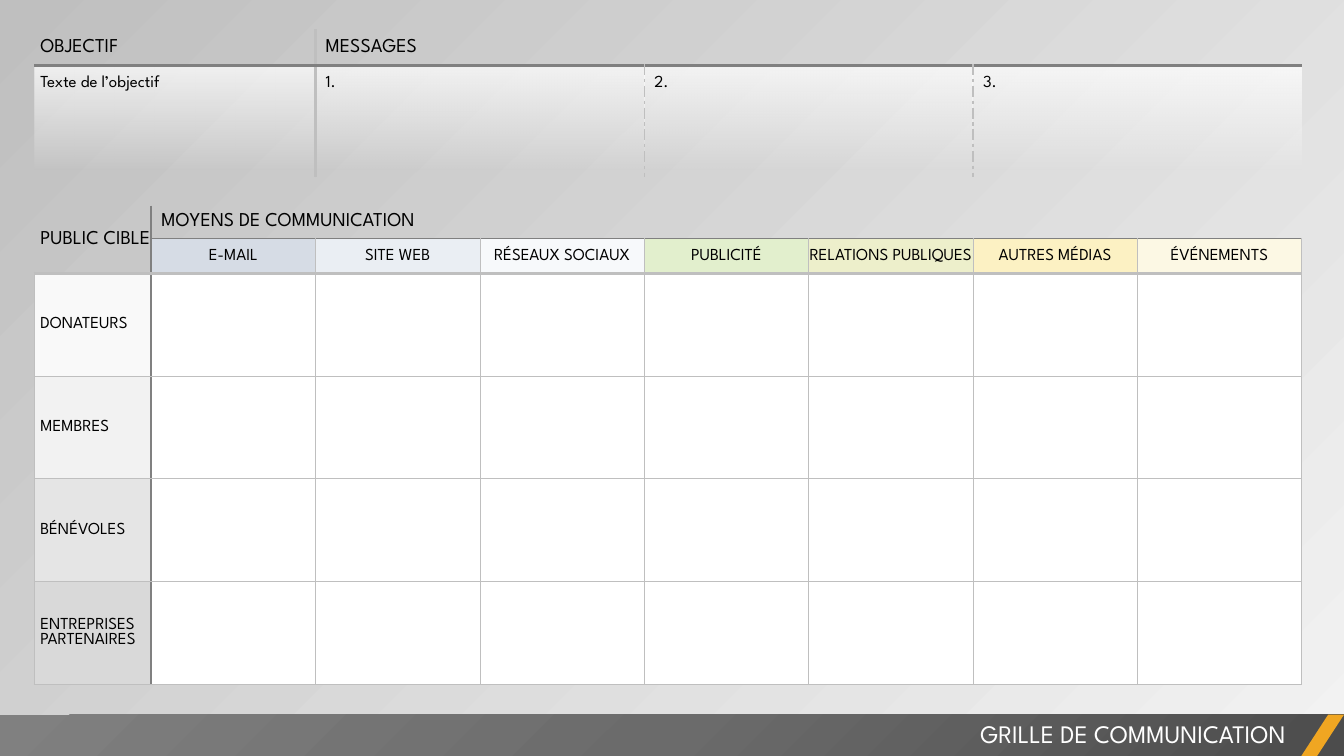
from pptx import Presentation
from pptx.dml.color import RGBColor
from pptx.enum.shapes import MSO_SHAPE as SHAPE
from pptx.enum.text import MSO_ANCHOR as ANCHOR, PP_ALIGN as ALIGN
from pptx.oxml import parse_xml
from pptx.oxml.ns import nsdecls, qn
from pptx.util import Inches, Pt

FONT = "League Spartan"
rgb = RGBColor.from_string

# Borders: colour, width in points, dash
THIN = ("BFBFBF", 0.5, "solid")
LIGHT = ("BFBFBF", 2.25, "solid")
DASH = ("BFBFBF", 1, "sysDashDot")
RULE = ("808080", 1, "solid")
AXIS = ("808080", 1.5, "solid")
HEAVY = ("808080", 2.25, "solid")


def set_gradient(fill, props, stops, direction):
    """Fill with stops of (position %, colour, opacity %)."""
    fill.solid()
    gs = "".join(
        f'<a:gs pos="{pos * 1000}"><a:srgbClr val="{color}">'
        f'<a:alpha val="{opacity * 1000}"/></a:srgbClr></a:gs>'
        for pos, color, opacity in stops)
    grad = parse_xml(f'<a:gradFill {nsdecls("a")} rotWithShape="1">'
                     f'<a:gsLst>{gs}</a:gsLst>{direction}</a:gradFill>')
    props.replace(props.find(qn("a:solidFill")), grad)


def set_cell(cell, text="", size=12, left=0.0, top=0.0, align=ALIGN.LEFT,
             anchor=ANCHOR.MIDDLE, color=None, borders=(None,) * 4):
    """Write one cell; borders are left, right, top, bottom."""
    cell.margin_left, cell.margin_top = Inches(left), Inches(top)
    cell.margin_right = cell.margin_bottom = 0
    cell.vertical_anchor = anchor
    for side, border in zip("LRTB", borders):
        if border:
            line, width, dash = border
            xml = (f'<a:ln{side} {nsdecls("a")} w="{Pt(width)}"><a:solidFill>'
                   f'<a:srgbClr val="{line}"/></a:solidFill>'
                   f'<a:prstDash val="{dash}"/></a:ln{side}>')
        else:
            xml = f'<a:ln{side} {nsdecls("a")} w="0"><a:noFill/></a:ln{side}>'
        cell._tc.tcPr.append(parse_xml(xml))
    if color:
        cell.fill.solid()
        cell.fill.fore_color.rgb = rgb(color)
    else:
        cell.fill.background()
    if text:
        p = cell.text_frame.paragraphs[0]
        p.alignment = align
        r = p.add_run()
        r.text = text
        r.font.name, r.font.size = FONT, Pt(size)
        r.font.color.rgb = rgb("000000")


prs = Presentation()
prs.slide_width, prs.slide_height = Inches(13.33), Inches(7.5)
s = prs.slides.add_slide(prs.slide_layouts[6])

# Background
bg_fill = s.background.fill
bg_fill.solid()
set_gradient(bg_fill, s._element.cSld.bg.bgPr,
             [(0, "F2F2F2", 40), (100, "BFBFBF", 100)],
             '<a:lin ang="13500000" scaled="0"/>')

# Communication grid
channels = [("E-MAIL", "D6DCE5"), ("SITE WEB", "EAEEF3"),
            ("RÉSEAUX SOCIAUX", "F7F9FB"), ("PUBLICITÉ", "E2EFCD"),
            ("RELATIONS PUBLIQUES", "EDEFCB"), ("AUTRES MÉDIAS", "FCF1C3"),
            ("ÉVÉNEMENTS", "FCF8E4")]
audiences = [("DONATEURS", "F9F9F9"), ("MEMBRES", "F2F2F2"),
             ("BÉNÉVOLES", "E5E5E5"), ("ENTREPRISES PARTENAIRES", "D9D9D9")]
grid = s.shapes.add_table(6, 8, Inches(0.34), Inches(2.04),
                          Inches(12.57), Inches(4.75)).table
grid.first_row = grid.horz_banding = False
for i, col in enumerate(grid.columns):
    col.width = Inches(1.63 if i else 1.16)
for row, height in zip(grid.rows, [0.33, 0.34] + [1.02] * 4):
    row.height = Inches(height)
grid.cell(0, 0).merge(grid.cell(1, 0))
grid.cell(0, 1).merge(grid.cell(0, 7))

set_cell(grid.cell(0, 0), "PUBLIC CIBLE", 14, 0.06,
         borders=(None, AXIS, None, LIGHT))
set_cell(grid.cell(1, 0), borders=(None, AXIS, None, LIGHT))
for c, (channel, color) in enumerate(channels, 1):
    before = AXIS if c == 1 else THIN
    set_cell(grid.cell(0, c), "MOYENS DE COMMUNICATION" if c == 1 else "",
             14, 0.1, borders=(AXIS if c == 1 else None, None, None, RULE))
    set_cell(grid.cell(1, c), channel, align=ALIGN.CENTER, color=color,
             borders=(before, THIN, RULE, LIGHT))
    for r in range(2, 6):
        set_cell(grid.cell(r, c), color="FFFFFF",
                 borders=(before, THIN, LIGHT if r == 2 else THIN, THIN))
for r, (audience, color) in enumerate(audiences, 2):
    set_cell(grid.cell(r, 0), audience, left=0.06, color=color,
             borders=(THIN, AXIS, LIGHT if r == 2 else THIN, THIN))

# Footer band
band = s.shapes.add_shape(SHAPE.RECTANGLE, 0, Inches(7.09),
                          Inches(13.33), Inches(0.41))
band.shadow.inherit = False
band.line.fill.background()
set_gradient(band.fill, band._element.spPr,
             [(0, "4C4C4C", 100), (50, "6B6B6B", 100), (100, "808080", 100)],
             '<a:path path="circle"><a:fillToRect l="100000" t="100000"/></a:path>')

accent = s.shapes.add_shape(SHAPE.PARALLELOGRAM, Inches(12.9), Inches(7.09),
                            Inches(0.43), Inches(0.42))
accent.adjustments[0] = 0.65
accent.shadow.inherit = False
accent.fill.solid()
accent.fill.fore_color.rgb = rgb("F0A622")
accent.line.fill.background()

# Slide title
tf = s.shapes.add_textbox(Inches(5.25), Inches(7.08),
                          Inches(7.6), Inches(0.4)).text_frame
tf.word_wrap = True
p = tf.paragraphs[0]
p.alignment = ALIGN.RIGHT
r = p.add_run()
r.text = "GRILLE DE COMMUNICATION"
r.font.name, r.font.size = FONT, Pt(18)
r.font.color.rgb = rgb("FFFFFF")

# Objective and messages
goals = s.shapes.add_table(2, 4, Inches(0.34), Inches(0.29),
                           Inches(12.57), Inches(1.47)).table
goals.first_row = goals.horz_banding = False
goals.rows[0].height, goals.rows[1].height = Inches(0.36), Inches(1.11)
goals.cell(0, 1).merge(goals.cell(0, 3))
dividers = [None, LIGHT, DASH, DASH, None]
headings = ["OBJECTIF", "MESSAGES", "", ""]
bodies = ["Texte de l’objectif", "1.", "2.", "3."]
for c, (heading, body) in enumerate(zip(headings, bodies)):
    goals.columns[c].width = Inches(3.26 if c else 2.79)
    left = 0.1 if c else 0.06
    set_cell(goals.cell(0, c), heading, 14, left,
             borders=(LIGHT if c == 1 else None, None if c else LIGHT,
                      None, HEAVY))
    cell = goals.cell(1, c)
    set_cell(cell, body, left=left, top=0.1, anchor=ANCHOR.TOP,
             borders=(dividers[c], dividers[c + 1], HEAVY, None))
    set_gradient(cell.fill, cell._tc.tcPr,
                 [(0, "FFFFFF", 75), (93, "FFFFFF", 0)],
                 '<a:lin ang="5400000" scaled="0"/>')

prs.save("out.pptx")
